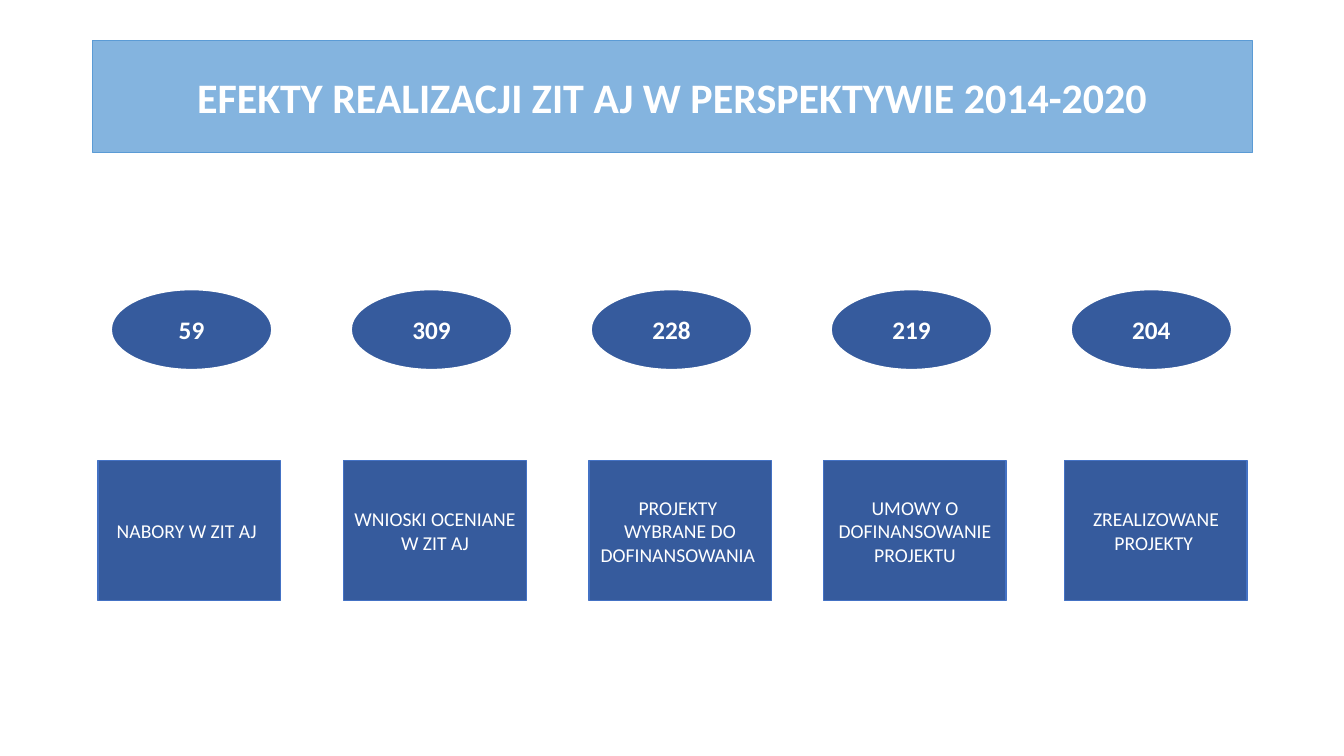
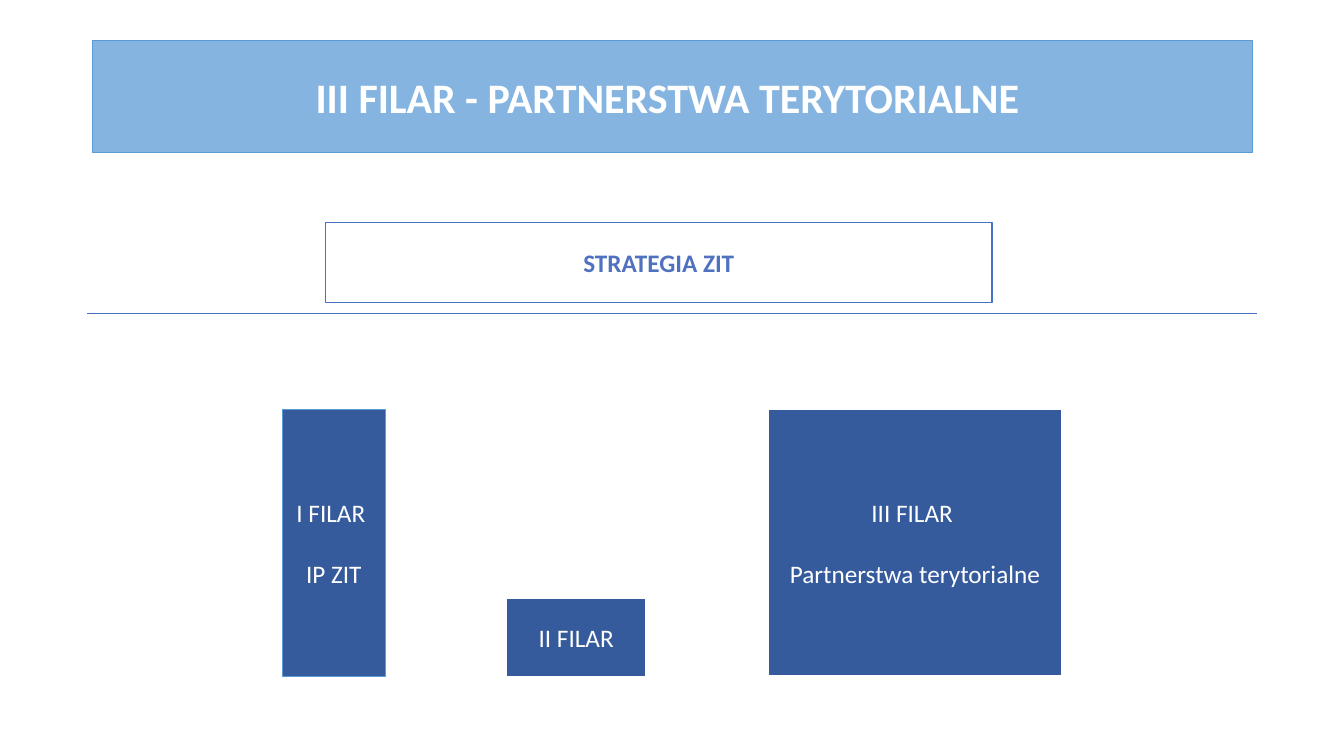
from pptx import Presentation
from pptx.dml.color import RGBColor
from pptx.enum.shapes import MSO_CONNECTOR, MSO_SHAPE
from pptx.enum.text import MSO_ANCHOR, MSO_AUTO_SIZE, PP_ALIGN
from pptx.oxml.ns import qn
from pptx.util import Inches, Pt
from lxml.etree import SubElement

WHITE = RGBColor(0xFF, 0xFF, 0xFF)
SKY = RGBColor(0x84, 0xB4, 0xDF)
EDGE = RGBColor(0x5B, 0x9B, 0xD5)
NAVY = RGBColor(0x36, 0x5B, 0x9D)
BLUE = RGBColor(0x44, 0x72, 0xC4)
INK = RGBColor(0x4F, 0x71, 0xBF)
FONT = "Calibri"

RESULTS = [
    (0.97, "59", "NABORY W ZIT AJ "),
    (3.41, "309", "WNIOSKI OCENIANE W ZIT AJ"),
    (5.84, "228", "PROJEKTY \nWYBRANE DO DOFINANSOWANIA "),
    (8.17, "219", "UMOWY O DOFINANSOWANIE PROJEKTU"),
    (10.56, "204", "ZREALIZOWANE PROJEKTY "),
]
PILLARS = [
    ((2.8, 4.06, 1.02, 2.65), "I FILAR \nIP ZIT", EDGE, 0.5),
    ((5.02, 5.93, 1.39, 0.79), "II FILAR", WHITE, 1.5),
    ((7.62, 4.06, 2.91, 2.65), "III FILAR \nPartnerstwa terytorialne", WHITE, 1.5),
]


def paint(shape, fill, line, width):
    shape.fill.solid()
    shape.fill.fore_color.rgb = fill
    shape.line.color.rgb = line
    shape.line.width = Pt(width)


def write(shape, text, size, bold=False, color=WHITE, gap=0):
    frame = shape.text_frame
    frame.text = text
    frame.word_wrap = True
    frame.auto_size = MSO_AUTO_SIZE.NONE
    frame.vertical_anchor = MSO_ANCHOR.MIDDLE
    frame.margin_left = frame.margin_right = Inches(0.05)
    frame.margin_top = frame.margin_bottom = Inches(0.05)
    for index, para in enumerate(frame.paragraphs):
        para.alignment = PP_ALIGN.CENTER
        para.space_before = Pt(gap if index else 0)
        for run in para.runs:
            run.font.name = FONT
            run.font.size = Pt(size)
            run.font.bold = bold
            run.font.color.rgb = color


def add_box(slide, kind, box, fill=NAVY, line=BLUE, width=1):
    shape = slide.shapes.add_shape(kind, *map(Inches, box))
    shape.shadow.inherit = False
    paint(shape, fill, line, width)
    return shape


def add_rule(slide, left, right, top):
    rule = slide.shapes.add_connector(
        MSO_CONNECTOR.STRAIGHT, Inches(left), Inches(top), Inches(right), Inches(top))
    rule.line.color.rgb = BLUE
    rule.line.width = Pt(1)
    SubElement(rule.element.spPr, qn("a:effectLst"))


def add_slide(deck, text):
    slide = deck.slides.add_slide(deck.slide_layouts[5])
    title = slide.shapes.title
    title.left, title.top = Inches(0.92), Inches(0.4)
    title.width, title.height = Inches(11.5), Inches(1.11)
    paint(title, SKY, EDGE, 0.5)
    write(title, text, 30, bold=True)
    return slide


def show_results(deck):
    slide = add_slide(deck, "EFEKTY REALIZACJI ZIT AJ W PERSPEKTYWIE 2014-2020")
    for index, (left, count, label) in enumerate(RESULTS):
        card = add_box(slide, MSO_SHAPE.RECTANGLE, (left, 4.57, 1.81, 1.39))
        write(card, label, 14)
        oval = add_box(slide, MSO_SHAPE.OVAL, (1.1 + 2.38 * index, 2.87, 1.6, 0.8),
                       line=WHITE, width=1.5)
        write(oval, count, 18, bold=True)


def show_pillars(deck):
    slide = add_slide(deck, "III FILAR - PARTNERSTWA TERYTORIALNE ")
    roof = add_box(slide, MSO_SHAPE.RECTANGLE, (3.23, 2.21, 6.61, 0.79), fill=WHITE)
    write(roof, "STRATEGIA ZIT", 18, bold=True, color=INK)
    for box, label, line, width in PILLARS:
        pillar = add_box(slide, MSO_SHAPE.RECTANGLE, box, line=line, width=width)
        write(pillar, label, 18, gap=22)
    add_rule(slide, 0.86, 12.47, 3.11)


def main():
    deck = Presentation()
    deck.slide_width, deck.slide_height = Inches(13.33), Inches(7.5)
    show_results(deck)
    show_pillars(deck)
    deck.save("out.pptx")


if __name__ == "__main__":
    main()
